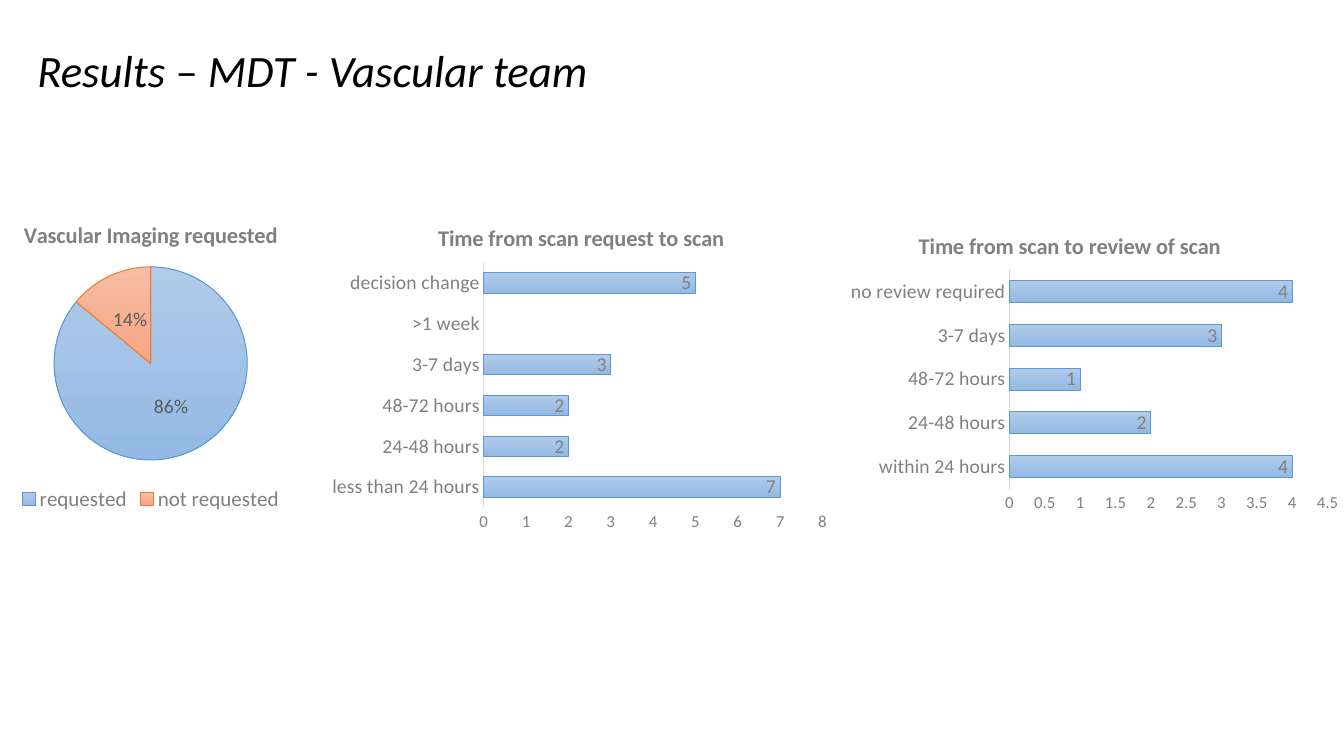
import dataclasses

import pptx
import pptx.chart.data
import pptx.dml.color
import pptx.enum.chart
import pptx.enum.text
import pptx.oxml
import pptx.oxml.ns
import pptx.util
from pptx.util import Inches


@dataclasses.dataclass(frozen=True)
class Theme:
    font: str = "Calibri"
    black: str = "000000"
    grey: str = "808080"
    dark_grey: str = "595959"
    axis: str = "D9D9D9"
    # Gradient top, gradient bottom, outline
    blue: tuple = ("B1CBE9", "93B9E4", "5998D0")
    orange: tuple = ("F7BDA5", "F8A582", "ED7D31")
    heading: int = 32
    chart_title: int = 16
    legend: int = 15
    label: int = 14
    tick: int = 12


def style_font(font, size, color, bold=False, italic=False):
    font.name = theme.font
    font.size = pptx.util.Pt(size)
    font.bold = bold
    font.italic = italic
    font.color.rgb = pptx.dml.color.RGBColor.from_string(color)


def paint(shape_format, colors):
    """Fill a bar or slice with a downward gradient and outline it."""
    *stop_colors, outline = colors
    shape_format.fill.gradient()
    shape_format.fill.gradient_angle = 270
    for stop, color in zip(shape_format.fill.gradient_stops, stop_colors):
        stop.color.rgb = pptx.dml.color.RGBColor.from_string(color)
    shape_format.line.color.rgb = pptx.dml.color.RGBColor.from_string(outline)
    shape_format.line.width = pptx.util.Pt(0.75)


theme = Theme()
chart_types = pptx.enum.chart.XL_CHART_TYPE
label_positions = pptx.enum.chart.XL_LABEL_POSITION
tick_marks = pptx.enum.chart.XL_TICK_MARK

deck = pptx.Presentation()
deck.slide_width = Inches(13.33)
deck.slide_height = Inches(7.5)
page = deck.slides.add_slide(deck.slide_layouts[5])

# Heading
heading = page.shapes.title
heading.left, heading.top = Inches(0.27), Inches(0)
heading.width, heading.height = Inches(11.5), Inches(1.45)
heading.text_frame.text = "Results – MDT - Vascular team"
heading.text_frame.vertical_anchor = pptx.enum.text.MSO_ANCHOR.MIDDLE
para = heading.text_frame.paragraphs[0]
para.alignment = pptx.enum.text.PP_ALIGN.LEFT
para.line_spacing = 0.9
style_font(para.font, theme.heading, theme.black, italic=True)

# Charts: box in inches, plot area as fractions of the box (x, y, w, h),
# and the top and step of the value axis for the bar charts
charts = [
    dict(title="Vascular Imaging requested", kind=chart_types.PIE,
         box=(-1.03, 2.03, 5.05, 3.09), plot=(0.31, 0.2, 0.38, 0.62),
         values={"requested": 86, "not requested": 14}),
    dict(title="Time from scan request to scan", kind=chart_types.BAR_CLUSTERED,
         box=(3.22, 2.05, 5.09, 3.28), plot=(0.31, 0.17, 0.66, 0.74),
         axis=(8, 1),
         values={"less than 24 hours": 7, "24-48 hours": 2, "48-72 hours": 2,
                 "3-7 days": 3, ">1 week": None, "decision change": 5}),
    dict(title="Time from scan to review of scan", kind=chart_types.BAR_CLUSTERED,
         box=(7.89, 2.13, 5.44, 3.2), plot=(0.39, 0.17, 0.58, 0.68),
         axis=(4.5, 0.5),
         values={"within 24 hours": 4, "24-48 hours": 2, "48-72 hours": 1,
                 "3-7 days": 3, "no review required": 4}),
]

for entry in charts:
    data = pptx.chart.data.CategoryChartData()
    data.categories = list(entry["values"])
    data.add_series("Series 1", list(entry["values"].values()))
    box = [Inches(length) for length in entry["box"]]
    chart = page.shapes.add_chart(entry["kind"], *box, data).chart
    style_font(chart.font, theme.label, theme.grey)

    chart.has_title = True
    chart.chart_title.text_frame.text = entry["title"]
    style_font(chart.chart_title.text_frame.paragraphs[0].font,
               theme.chart_title, theme.grey, bold=True)

    plot = chart.plots[0]
    series = plot.series[0]
    labels = series.data_labels
    is_pie = entry["kind"] == chart_types.PIE
    chart.has_legend = is_pie
    labels.show_value = not is_pie
    labels.show_percentage = is_pie

    if is_pie:
        chart.legend.position = pptx.enum.chart.XL_LEGEND_POSITION.BOTTOM
        chart.legend.include_in_layout = False
        style_font(chart.legend.font, theme.legend, theme.grey)
        labels.position = label_positions.CENTER
        labels.number_format = "0%"
        labels.number_format_is_linked = False
        style_font(labels.font, theme.label, theme.dark_grey)
        for index, colors in enumerate((theme.blue, theme.orange)):
            paint(series.points[index].format, colors)
    else:
        plot.vary_by_categories = False
        plot.gap_width = 100
        paint(series.format, theme.blue)
        labels.position = label_positions.INSIDE_END
        style_font(labels.font, theme.label, theme.grey)
        category_axis, value_axis = chart.category_axis, chart.value_axis
        for axis, size in ((category_axis, theme.label), (value_axis, theme.tick)):
            axis.major_tick_mark = axis.minor_tick_mark = tick_marks.NONE
            axis.has_major_gridlines = False
            style_font(axis.tick_labels.font, size, theme.grey)
        category_axis.format.line.color.rgb = (
            pptx.dml.color.RGBColor.from_string(theme.axis))
        category_axis.format.line.width = pptx.util.Pt(0.75)
        value_axis.format.line.fill.background()
        value_axis.minimum_scale = 0
        value_axis.maximum_scale, value_axis.major_unit = entry["axis"]
        value_axis.tick_labels.number_format = "General"
        value_axis.tick_labels.number_format_is_linked = False

    plot_area = chart.element.xpath("c:chart/c:plotArea")[0]
    for old_layout in plot_area.xpath("c:layout"):
        plot_area.remove(old_layout)
    x, y, width, height = entry["plot"]
    plot_area.insert(0, pptx.oxml.parse_xml(
        f'<c:layout {pptx.oxml.ns.nsdecls("c")}><c:manualLayout>'
        '<c:layoutTarget val="inner"/><c:xMode val="edge"/><c:yMode val="edge"/>'
        f'<c:x val="{x}"/><c:y val="{y}"/><c:w val="{width}"/><c:h val="{height}"/>'
        '</c:manualLayout></c:layout>'))

deck.save("out.pptx")
